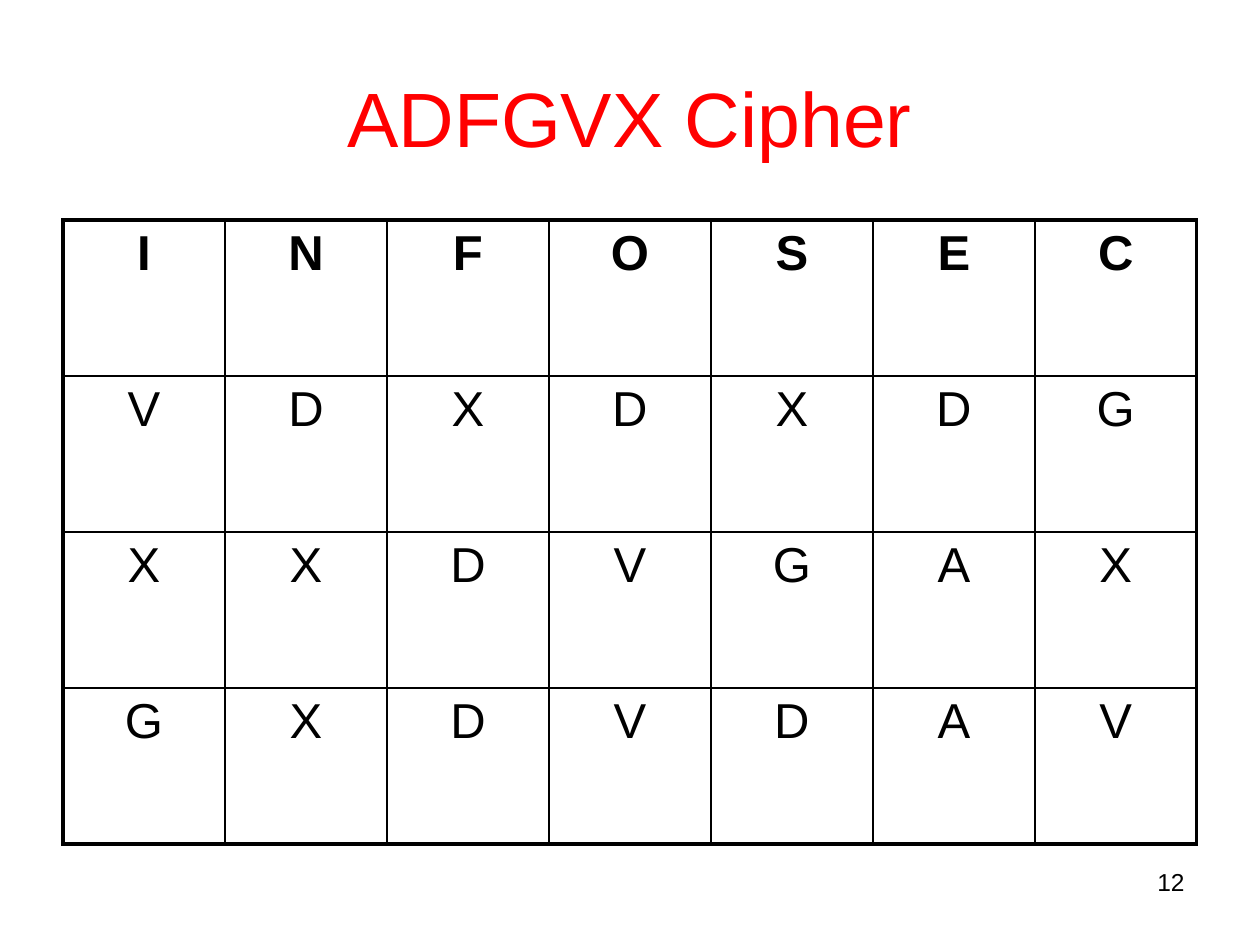
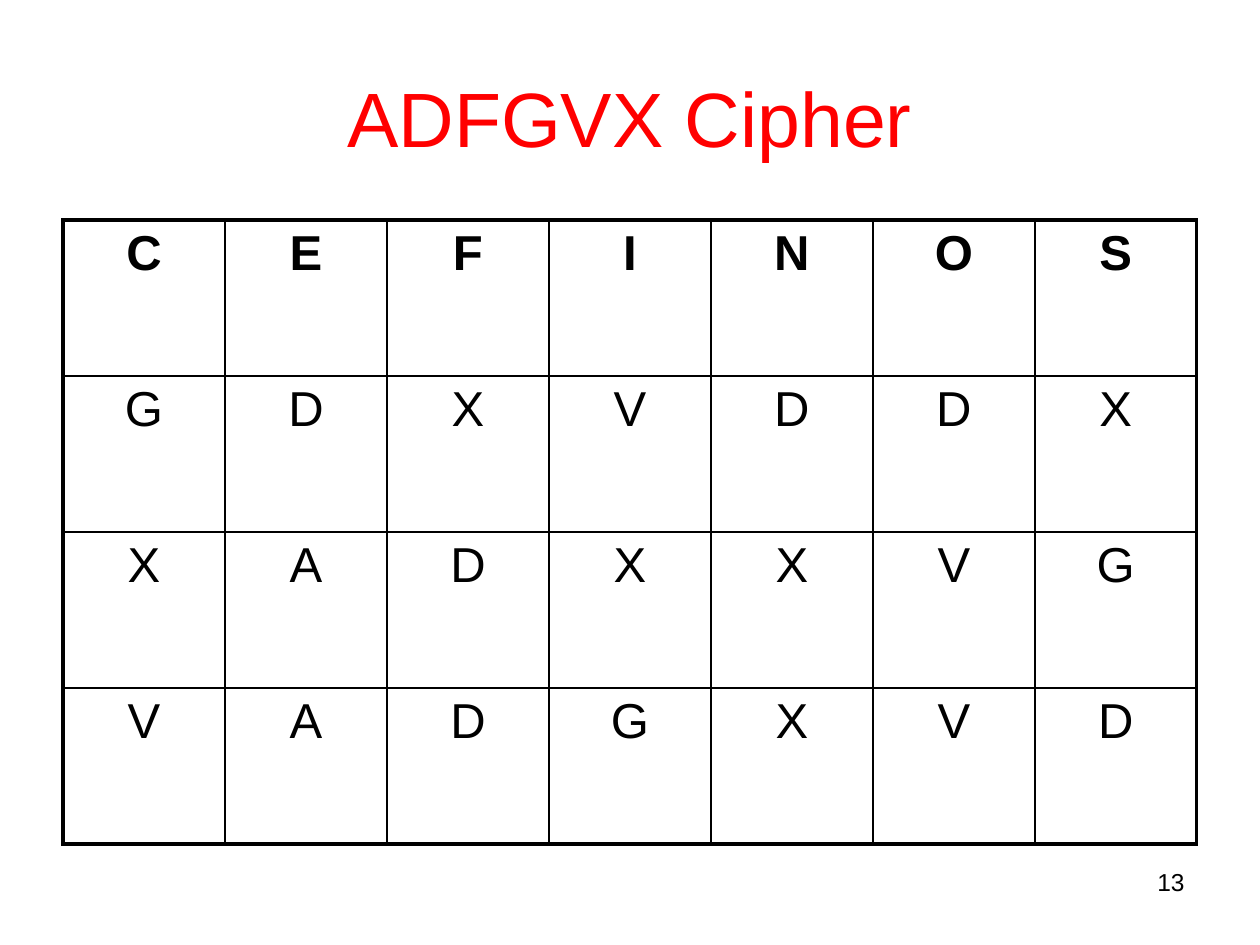
"""Build two slides that show a keyed ADFGVX grid before and after its columns are sorted."""
from lxml import etree
from pptx import Presentation
from pptx.dml.color import RGBColor
from pptx.enum.text import MSO_ANCHOR, PP_ALIGN
from pptx.oxml.ns import qn
from pptx.util import Pt

TITLE = "ADFGVX Cipher"
GRID = ["INFOSEC", "VDXDXDG", "XXDVGAX", "GXDVDAV"]
SORTED = list(zip(*sorted(zip(*GRID))))
FIRST = 12

RED = RGBColor(255, 0, 0)
BLACK = RGBColor(0, 0, 0)
CENTER, RIGHT = PP_ALIGN.CENTER, PP_ALIGN.RIGHT
MIDDLE = MSO_ANCHOR.MIDDLE

SCALE = 914400 / 126
PAGE = (1260, 945)
HEAD = (63, 38, 1134, 157)
FOOT = (903, 861, 294, 65)
LEFT, TOP, COL, ROW = 63, 220, 162, 156
THIN, THICK = Pt(1), Pt(2.25)

HEAD_FONT = {"name": "Arial", "size": Pt(44), "bold": False}
CELL_FONT = {"name": "Arial", "size": Pt(28)}
FOOT_FONT = {"name": "Arial", "size": Pt(14)}


def px(*nums):
    return [round(num * SCALE) for num in nums]


def write(frame, text, font, color, align):
    para = frame.paragraphs[0]
    para.alignment = align
    run = para.add_run()
    run.text = text
    for key, value in font.items():
        setattr(run.font, key, value)
    run.font.color.rgb = color
    return para


def lead(para, percent):
    space = etree.SubElement(para._p.get_or_add_pPr(), qn("a:spcBef"))
    etree.SubElement(space, qn("a:spcPct"), val=str(percent * 1000))


def border(cell, edges):
    props = cell._tc.get_or_add_tcPr()
    for side, outer in edges.items():
        line = etree.SubElement(props, qn(f"a:ln{side}"), w=str(THICK if outer else THIN))
        fill = etree.SubElement(line, qn("a:solidFill"))
        etree.SubElement(fill, qn("a:srgbClr"), val=str(BLACK))


def add_grid(slide, grid):
    rows, cols = len(grid), len(grid[0])
    table = slide.shapes.add_table(rows, cols, *px(LEFT, TOP, cols * COL, rows * ROW)).table
    table.first_row = table.horz_banding = False
    for col in table.columns:
        col.width = px(COL)[0]
    for row in table.rows:
        row.height = px(ROW)[0]
    for r, letters in enumerate(grid):
        for c, letter in enumerate(letters):
            cell = table.cell(r, c)
            font = CELL_FONT | {"bold": r == 0}
            lead(write(cell.text_frame, letter, font, BLACK, CENTER), 20)
            border(cell, {"L": c == 0, "R": c == cols - 1, "T": r == 0, "B": r == rows - 1})
            cell.fill.background()


def add_slide(deck, grid, number):
    slide = deck.slides.add_slide(deck.slide_layouts[5])
    foot = slide.shapes.add_textbox(*px(*FOOT)).text_frame
    foot.word_wrap = True
    write(foot, str(number), FOOT_FONT, BLACK, RIGHT)
    title = slide.shapes.title
    title.left, title.top, title.width, title.height = px(*HEAD)
    title.text_frame.vertical_anchor = MIDDLE
    write(title.text_frame, TITLE, HEAD_FONT, RED, CENTER)
    add_grid(slide, grid)


def main():
    deck = Presentation()
    deck.slide_width, deck.slide_height = px(*PAGE)
    for number, grid in enumerate([GRID, SORTED], FIRST):
        add_slide(deck, grid, number)
    deck.save("out.pptx")


if __name__ == "__main__":
    main()
